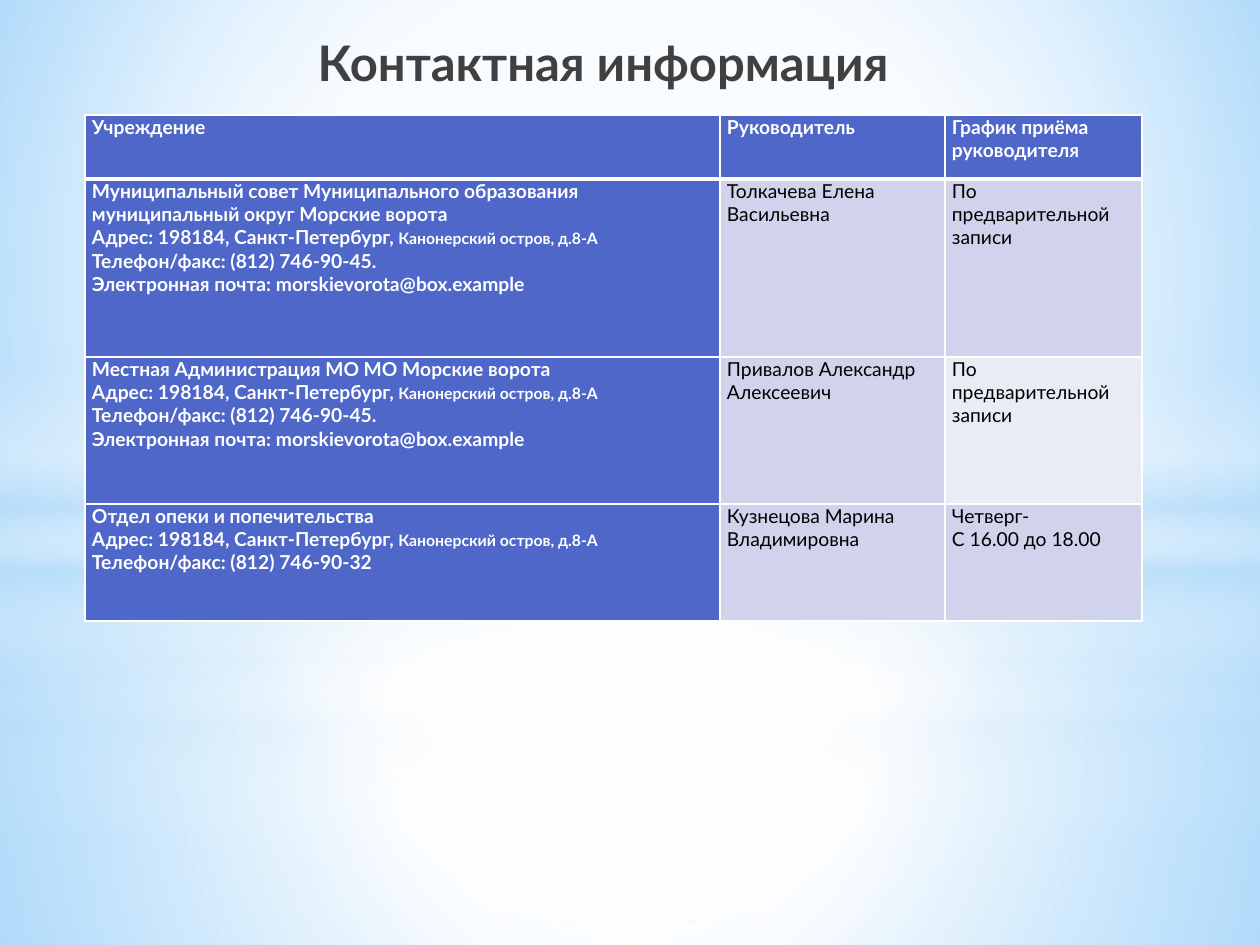
from pptx import Presentation
from pptx.dml.color import RGBColor
from pptx.enum.shapes import MSO_SHAPE
from pptx.enum.text import MSO_ANCHOR, PP_ALIGN
from pptx.oxml import parse_xml
from pptx.oxml.ns import nsdecls
from pptx.util import Emu, Pt

EMU_PER_PX = 914400 // 126
SLIDE_WIDTH, SLIDE_HEIGHT = 1260, 945
BLUE, LILAC, PALE = "4E67C8", "D0D3EB", "E9EBF5"
WHITE, BLACK, DARK, SKY = "FFFFFF", "000000", "404040", "B4DCFA"
CENTRE = (50, 50, 50, 50)

# Gradient stops: position %, colour, opacity %
BACKGROUND = [(0, "9ED5FF", 100), (60, WHITE, 100), (100, "5BB9FF", 100)]
BAND = [(0, WHITE, 0), (29, WHITE, 30), (45, SKY, 40),
        (55, WHITE, 26), (65, SKY, 60), (100, WHITE, 0)]


def sky_glow(middle, centre_opacity, middle_opacity, edge_opacity):
    return [(0, WHITE, centre_opacity), (middle, WHITE, middle_opacity),
            (100, SKY, edge_opacity)]


def white_glow(edge):
    return [(0, WHITE, 100), (edge, WHITE, 0)]


# Backdrop layers: preset, top, height, stops, focus (None for a vertical gradient)
RECTANGLE, OVAL = MSO_SHAPE.RECTANGLE, MSO_SHAPE.OVAL
BACKDROP = [
    (RECTANGLE, 703, 242, sky_glow(37, 91, 76, 79), CENTRE),
    (RECTANGLE, 0, 703, sky_glow(48, 89, 62, 79), CENTRE),
    (RECTANGLE, 519, 315, BAND, None),
    (OVAL, 220, 703, white_glow(56), CENTRE),
    (RECTANGLE, 533, 412, sky_glow(37, 92, 77, 80), CENTRE),
    (RECTANGLE, 0, 533, sky_glow(48, 90, 63, 80), CENTRE),
    (RECTANGLE, 365, 315, BAND, None),
    (OVAL, 220, 703, white_glow(54), CENTRE),
]

# A cell is a list of paragraphs; a paragraph is a list of (text, size) runs
ADDRESS = [("Адрес: 198184, Санкт-Петербург,", 11), (" Канонерский остров, д.8-А", 9)]


def lines(*texts):
    return [[(text, 11)] for text in texts]


def institution(name, *contacts):
    return lines(name) + [ADDRESS] + lines(*contacts)


COUNCIL_CONTACTS = ("Телефон/факс: (812) 746-90-45.",
                    "Электронная почта: morskievorota@box.example")
BY_APPOINTMENT = lines("По предварительной записи")
CONTACTS = [
    [lines("Учреждение"), lines("Руководитель"), lines("График приёма руководителя")],
    [institution("Муниципальный совет Муниципального образования "
                 "муниципальный округ Морские ворота", *COUNCIL_CONTACTS),
     lines("Толкачева Елена Васильевна"), BY_APPOINTMENT],
    [institution("Местная Администрация МО МО Морские ворота", *COUNCIL_CONTACTS),
     lines("Привалов Александр Алексеевич"), BY_APPOINTMENT],
    [institution("Отдел опеки и попечительства", "Телефон/факс: (812) 746-90-32"),
     lines("Кузнецова Марина", "Владимировна"), lines("Четверг-", "С 16.00 до 18.00")],
]
COLUMN_WIDTHS = [635, 225, 197]
ROW_HEIGHTS = [64, 178, 147, 117]


def px(length):
    return Emu(length * EMU_PER_PX)


def colour(hex_string):
    return RGBColor.from_string(hex_string)


def apply_gradient(fill, element, stops, focus):
    """Fill with translucent stops, circular around focus (l, t, r, b %) or vertical."""
    fill.gradient()
    stop_xml = "".join(
        f'<a:gs pos="{position * 1000}"><a:srgbClr val="{rgb}">'
        f'<a:alpha val="{opacity * 1000}"/></a:srgbClr></a:gs>'
        for position, rgb, opacity in stops)
    if focus:
        left, top, right, bottom = (percent * 1000 for percent in focus)
        direction = (f'<a:path path="circle"><a:fillToRect l="{left}" t="{top}" '
                     f'r="{right}" b="{bottom}"/></a:path>')
    else:
        direction = '<a:lin ang="5400000" scaled="0"/>'
    old = element.xpath(".//a:gradFill")[0]
    old.getparent().replace(old, parse_xml(
        f'<a:gradFill {nsdecls("a")} rotWithShape="1"><a:gsLst>{stop_xml}</a:gsLst>'
        f'{direction}</a:gradFill>'))


class ContactSlide:
    """Holds the slide and its text style."""

    def __init__(self, slide, font="Lato"):
        self.slide = slide
        self.font = font

    def background(self, stops, focus):
        apply_gradient(self.slide.background.fill, self.slide._element, stops, focus)

    def layer(self, preset, top, height, stops, focus):
        shape = self.slide.shapes.add_shape(preset, 0, px(top), px(SLIDE_WIDTH), px(height))
        shape.shadow.inherit = False
        shape.line.fill.background()
        apply_gradient(shape.fill, shape._element, stops, focus)

    def run(self, paragraph, text, size, rgb, bold):
        run = paragraph.add_run()
        run.text = text
        run.font.name = self.font
        run.font.size = Pt(size)
        run.font.bold = bold
        run.font.color.rgb = colour(rgb)

    def title(self, text, left, top, width, height):
        title = self.slide.shapes.title
        title.left, title.top, title.width, title.height = map(px, (left, top, width, height))
        frame = title.text_frame
        frame.margin_top = frame.margin_bottom = 0
        frame.vertical_anchor = MSO_ANCHOR.MIDDLE
        paragraph = frame.paragraphs[0]
        paragraph.alignment = PP_ALIGN.CENTER
        self.run(paragraph, text, 28, DARK, True)
        # Bring the title in front of the backdrop
        self.slide.shapes._spTree.append(title._element)

    def table(self, left, top, widths, heights, rows):
        table = self.slide.shapes.add_table(
            len(rows), len(widths), px(left), px(top), px(sum(widths)), px(sum(heights))).table
        for column, width in zip(table.columns, widths):
            column.width = px(width)
        for row, height in zip(table.rows, heights):
            row.height = px(height)
        for i, row in enumerate(rows):
            for j, paragraphs in enumerate(row):
                heading = i == 0 or j == 0
                fill = BLUE if heading else PALE if (i, j) == (2, 2) else LILAC
                cell = table.cell(i, j)
                self.borders(cell, top=3 if i == 1 else 1, bottom=3 if i == 0 else 1)
                self.cell(cell, paragraphs, fill, heading)

    def cell(self, cell, paragraphs, fill, heading):
        cell.fill.solid()
        cell.fill.fore_color.rgb = colour(fill)
        cell.margin_left = cell.margin_right = px(7)
        cell.margin_top = cell.margin_bottom = 0
        frame = cell.text_frame
        for i, runs in enumerate(paragraphs):
            paragraph = frame.add_paragraph() if i else frame.paragraphs[0]
            for text, size in runs:
                self.run(paragraph, text, size, WHITE if heading else BLACK, heading)

    def borders(self, cell, top, bottom):
        properties = cell._tc.get_or_add_tcPr()
        for i, (side, width) in enumerate(zip("LRTB", (1, 1, top, bottom))):
            properties.insert(i, parse_xml(
                f'<a:ln{side} {nsdecls("a")} w="{Pt(width)}"><a:solidFill>'
                f'<a:srgbClr val="{WHITE}"/></a:solidFill></a:ln{side}>'))


def main():
    presentation = Presentation()
    presentation.slide_width, presentation.slide_height = px(SLIDE_WIDTH), px(SLIDE_HEIGHT)
    title_only = presentation.slide_layouts[5]
    contact_slide = ContactSlide(presentation.slides.add_slide(title_only))
    contact_slide.background(BACKGROUND, (20, 10, 20, 60))
    for layer in BACKDROP:
        contact_slide.layer(*layer)
    contact_slide.title("Контактная информация", 74, 32, 1058, 59)
    contact_slide.table(85, 115, COLUMN_WIDTHS, ROW_HEIGHTS, CONTACTS)
    presentation.save("out.pptx")


if __name__ == "__main__":
    main()
